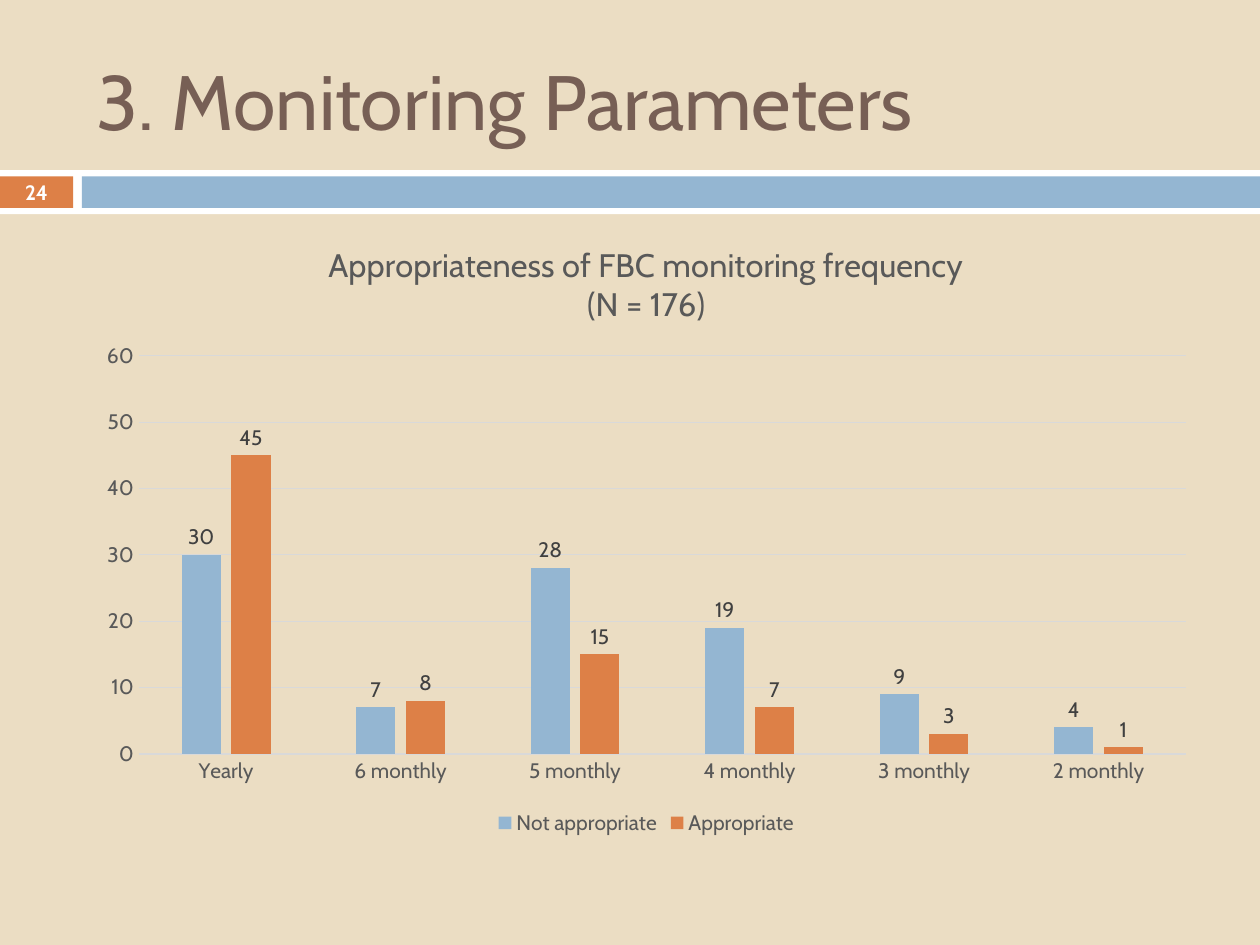
from dataclasses import dataclass

from pptx import Presentation
from pptx.chart.data import CategoryChartData
from pptx.dml.color import RGBColor
from pptx.enum.chart import XL_CHART_TYPE, XL_LABEL_POSITION, XL_LEGEND_POSITION, XL_TICK_MARK
from pptx.enum.shapes import MSO_SHAPE
from pptx.enum.text import MSO_ANCHOR, PP_ALIGN
from pptx.slide import Slide
from pptx.util import Inches, Pt

COLORS = {
    "sand": "EBDDC3", "white": "FFFFFF", "orange": "DD8047", "blue": "94B6D2",
    "brown": "775F55", "gray": "595959", "dark": "404040", "grid": "D9D9D9",
}
CATEGORIES = ["Yearly", "6 monthly", "5 monthly", "4 monthly", "3 monthly", "2 monthly"]
SERIES = {
    "Not appropriate": ("blue", [30, 7, 28, 19, 9, 4]),
    "Appropriate": ("orange", [45, 8, 15, 7, 3, 1]),
}


def rgb(name):
    """Return the named colour."""
    return RGBColor.from_string(COLORS[name])


@dataclass
class SlideBuilder:
    """Hold the style and the current slide."""

    page: Slide
    font_name: str = "Cabin"

    def style(self, font, size, color, bold=False):
        """Apply the typeface, size, colour and weight."""
        font.name = self.font_name
        font.size = Pt(size)
        font.bold = bold
        font.color.rgb = rgb(color)

    def background(self, color):
        """Fill the slide background."""
        fill = self.page.background.fill
        fill.solid()
        fill.fore_color.rgb = rgb(color)

    def bar(self, left, top, width, height, color):
        """Add a plain rectangle."""
        shape = self.page.shapes.add_shape(
            MSO_SHAPE.RECTANGLE, Inches(left), Inches(top), Inches(width), Inches(height))
        shape.shadow.inherit = False
        shape.fill.solid()
        shape.fill.fore_color.rgb = rgb(color)
        shape.line.fill.background()

    def text(self, left, top, width, height, words, size, color,
             bold=False, align=PP_ALIGN.LEFT):
        """Add a vertically centred line of text."""
        box = self.page.shapes.add_textbox(
            Inches(left), Inches(top), Inches(width), Inches(height))
        frame = box.text_frame
        frame.word_wrap = True
        frame.vertical_anchor = MSO_ANCHOR.MIDDLE
        frame.text = words
        para = frame.paragraphs[0]
        para.alignment = align
        self.style(para.runs[0].font, size, color, bold)

    def column_chart(self, left, top, width, height, title):
        """Add the clustered column chart."""
        data = CategoryChartData()
        data.categories = CATEGORIES
        for name, (_, values) in SERIES.items():
            data.add_series(name, values)
        chart = self.page.shapes.add_chart(
            XL_CHART_TYPE.COLUMN_CLUSTERED, Inches(left), Inches(top),
            Inches(width), Inches(height), data).chart
        self.style(chart.font, 12, "gray")

        chart.has_title = True
        chart.chart_title.include_in_layout = False
        frame = chart.chart_title.text_frame
        frame.text = title
        for para in frame.paragraphs:
            self.style(para.runs[0].font, 18.6, "gray")

        chart.has_legend = True
        chart.legend.position = XL_LEGEND_POSITION.BOTTOM
        chart.legend.include_in_layout = False
        self.style(chart.legend.font, 12, "gray")
        self.axes(chart)
        self.columns(chart.plots[0])

    def axes(self, chart):
        """Format both axes and the gridlines."""
        for axis in (chart.category_axis, chart.value_axis):
            axis.major_tick_mark = axis.minor_tick_mark = XL_TICK_MARK.NONE
            self.style(axis.tick_labels.font, 12, "gray")
        values = chart.value_axis
        values.minimum_scale, values.maximum_scale, values.major_unit = 0, 60, 10
        values.has_major_gridlines = True
        values.format.line.fill.background()
        for line in (chart.category_axis.format.line, values.major_gridlines.format.line):
            line.color.rgb = rgb("grid")
            line.width = Pt(0.75)

    def columns(self, plot):
        """Format the columns and their value labels."""
        plot.gap_width, plot.overlap = 219, -27
        plot.vary_by_categories = False
        for series in plot.series:
            series.invert_if_negative = False
            series.format.fill.solid()
            series.format.fill.fore_color.rgb = rgb(SERIES[series.name][0])
            labels = series.data_labels
            labels.show_value = True
            labels.position = XL_LABEL_POSITION.OUTSIDE_END
            self.style(labels.font, 12, "dark")


def main():
    """Build and save the slide."""
    deck = Presentation()
    deck.slide_width, deck.slide_height = Inches(10), Inches(7.5)
    builder = SlideBuilder(deck.slides.add_slide(deck.slide_layouts[6]))
    builder.background("sand")
    builder.bar(0, 1.35, 10, 0.35, "white")
    builder.bar(0, 1.4, 0.58, 0.25, "orange")
    builder.bar(0.65, 1.4, 9.35, 0.25, "blue")
    builder.text(0.67, 0.25, 8.92, 1.08, "3. Monitoring Parameters", 44, "brown")
    builder.text(0, 1.39, 0.58, 0.27, "24", 11.9, "white", True, PP_ALIGN.CENTER)
    builder.column_chart(0.67, 1.75, 8.92, 4.92,
                         "Appropriateness of FBC monitoring frequency\n(N = 176)")
    deck.save("out.pptx")


if __name__ == "__main__":
    main()
